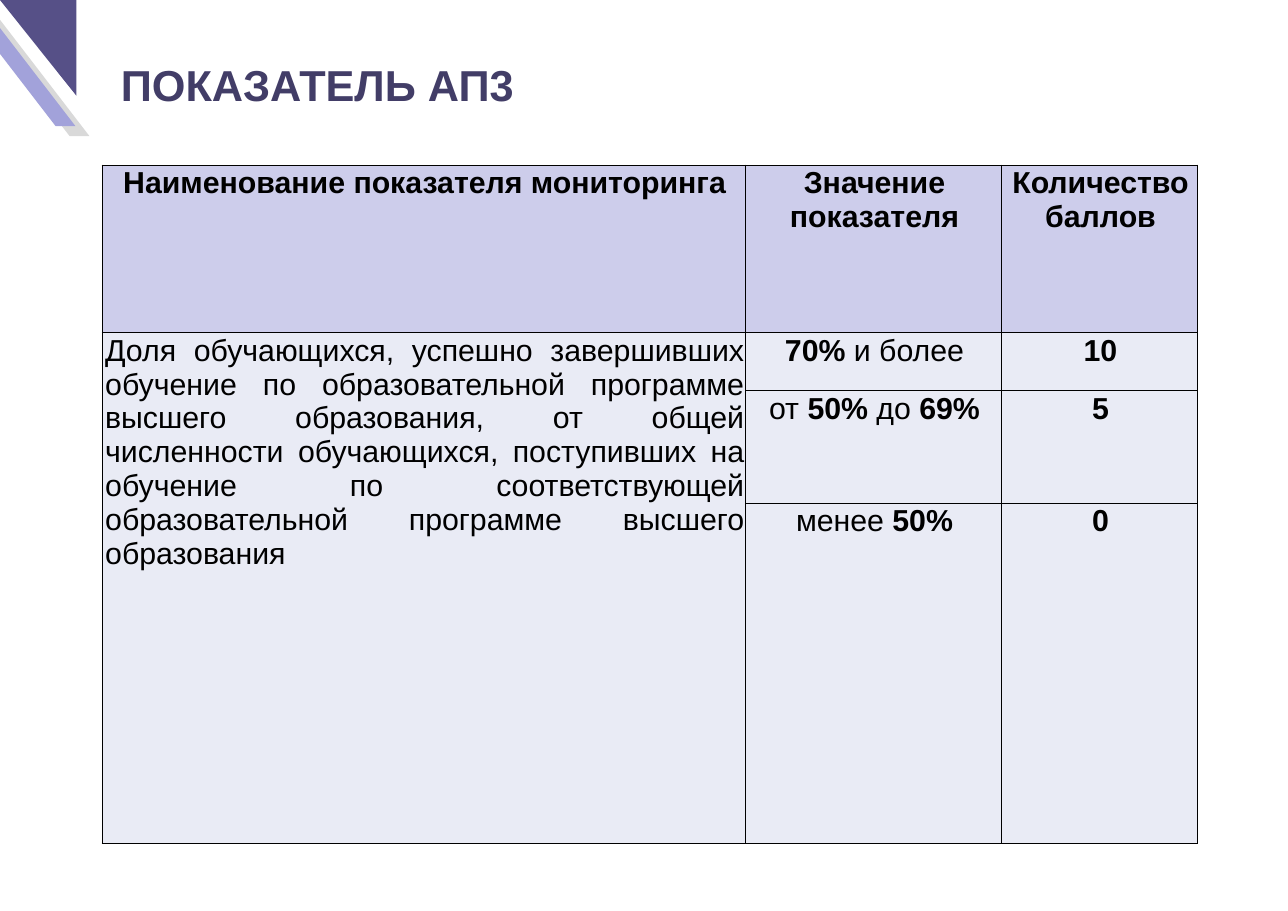
import pptx
import pptx.dml.color
import pptx.enum.shapes
import pptx.enum.text
import pptx.oxml
import pptx.oxml.ns
import pptx.util

Cm = pptx.util.Cm
Align = pptx.enum.text.PP_ALIGN
Shapes = pptx.enum.shapes.MSO_SHAPE

FONT = "Arial"
HEADER_FILL = "CDCDEB"
BODY_FILL = "E9EBF5"
COLUMN_WIDTHS = (20.98, 8.36, 6.38)
ROW_HEIGHTS = (5.46, 1.9, 3.66, 11.1)
INDICATOR = (
    "Доля обучающихся, успешно завершивших обучение по образовательной "
    "программе высшего образования, от общей численности обучающихся, "
    "поступивших на обучение по соответствующей образовательной программе "
    "высшего образования"
)
# Asterisks enclose bold text
ROWS = (
    ("*Наименование показателя мониторинга*", "*Значение показателя*", "*Количество баллов*"),
    (INDICATOR, "*70%* и более", "*10*"),
    ("", "от *50%* до *69%*", "*5*"),
    ("", "менее *50%*", "*0*"),
)


def color(value):
    return pptx.dml.color.RGBColor.from_string(value)


def set_font(font, size, value):
    font.name = FONT
    font.size = pptx.util.Pt(size)
    font.color.rgb = color(value)


def add_decoration(slide, kind, left, top, width, height, fill):
    shape = slide.shapes.add_shape(kind, Cm(left), Cm(top), Cm(width), Cm(height))
    shape.shadow.inherit = False
    shape.fill.solid()
    shape.fill.fore_color.rgb = color(fill)
    shape.line.fill.background()
    return shape


def add_stripe(slide, left, top, fill):
    stripe = add_decoration(slide, Shapes.PARALLELOGRAM, left, top, 3.81, 4.11, fill)
    stripe.adjustments[0] = 0.83
    stripe.element.spPr.xfrm.set("flipH", "1")


def format_title(slide, text):
    title = slide.shapes.title
    title.left, title.top = Cm(3.94), Cm(1.78)
    title.width, title.height = Cm(31.52), Cm(1.96)
    frame = title.text_frame
    frame.text = text
    frame.margin_left = 0
    frame.word_wrap = True
    frame.auto_size = pptx.enum.text.MSO_AUTO_SIZE.SHAPE_TO_FIT_TEXT
    paragraph = frame.paragraphs[0]
    paragraph.alignment = Align.LEFT
    set_font(paragraph.font, 40, "423D67")
    paragraph.font.bold = True


def add_borders(cell):
    properties = cell._tc.get_or_add_tcPr()
    for side in ("lnL", "lnR", "lnT", "lnB"):
        properties.append(pptx.oxml.parse_xml(
            f'<a:{side} {pptx.oxml.ns.nsdecls("a")} w="12700"><a:solidFill>'
            f'<a:srgbClr val="000000"/></a:solidFill></a:{side}>'
        ))


def fill_cell(cell, text, fill, alignment):
    add_borders(cell)
    cell.fill.solid()
    cell.fill.fore_color.rgb = color(fill)
    cell.margin_left = Cm(0.1)
    cell.margin_right = cell.margin_top = cell.margin_bottom = Cm(0.05)
    paragraph = cell.text_frame.paragraphs[0]
    paragraph.alignment = alignment
    set_font(paragraph.font, 28, "000000")
    parts = [(part, index % 2 == 1) for index, part in enumerate(text.split("*")) if part]
    mixed = len(parts) > 1
    for part, bold in parts:
        run = paragraph.add_run()
        run.text = part
        (run if mixed else paragraph).font.bold = bold


def add_score_table(slide):
    table = slide.shapes.add_table(
        len(ROWS), len(COLUMN_WIDTHS), Cm(3.33), Cm(5.38),
        Cm(sum(COLUMN_WIDTHS)), Cm(sum(ROW_HEIGHTS)),
    ).table
    table.first_row = table.horz_banding = False
    for column, width in zip(table.columns, COLUMN_WIDTHS):
        column.width = Cm(width)
    for row, height in zip(table.rows, ROW_HEIGHTS):
        row.height = Cm(height)
    for row_index, texts in enumerate(ROWS):
        for column_index, text in enumerate(texts):
            is_header = row_index == 0
            justified = column_index == 0 and not is_header
            fill_cell(
                table.cell(row_index, column_index), text,
                HEADER_FILL if is_header else BODY_FILL,
                Align.JUSTIFY if justified else Align.CENTER,
            )
    table.cell(1, 0).merge(table.cell(3, 0))


def main():
    presentation = pptx.Presentation()
    presentation.slide_width, presentation.slide_height = Cm(42), Cm(29.7)
    slide = presentation.slides.add_slide(presentation.slide_layouts[5])

    # Corner decoration
    add_stripe(slide, -0.89, 0.33, "D9D9D9")
    add_stripe(slide, -1.35, 0, "A2A2DA")
    corner = add_decoration(slide, Shapes.RIGHT_TRIANGLE, 0, 0, 2.49, 3.12, "565087")
    corner.rotation = 180

    # Title and table
    format_title(slide, "ПОКАЗАТЕЛЬ АП3")
    add_score_table(slide)
    presentation.save("out.pptx")


if __name__ == "__main__":
    main()
